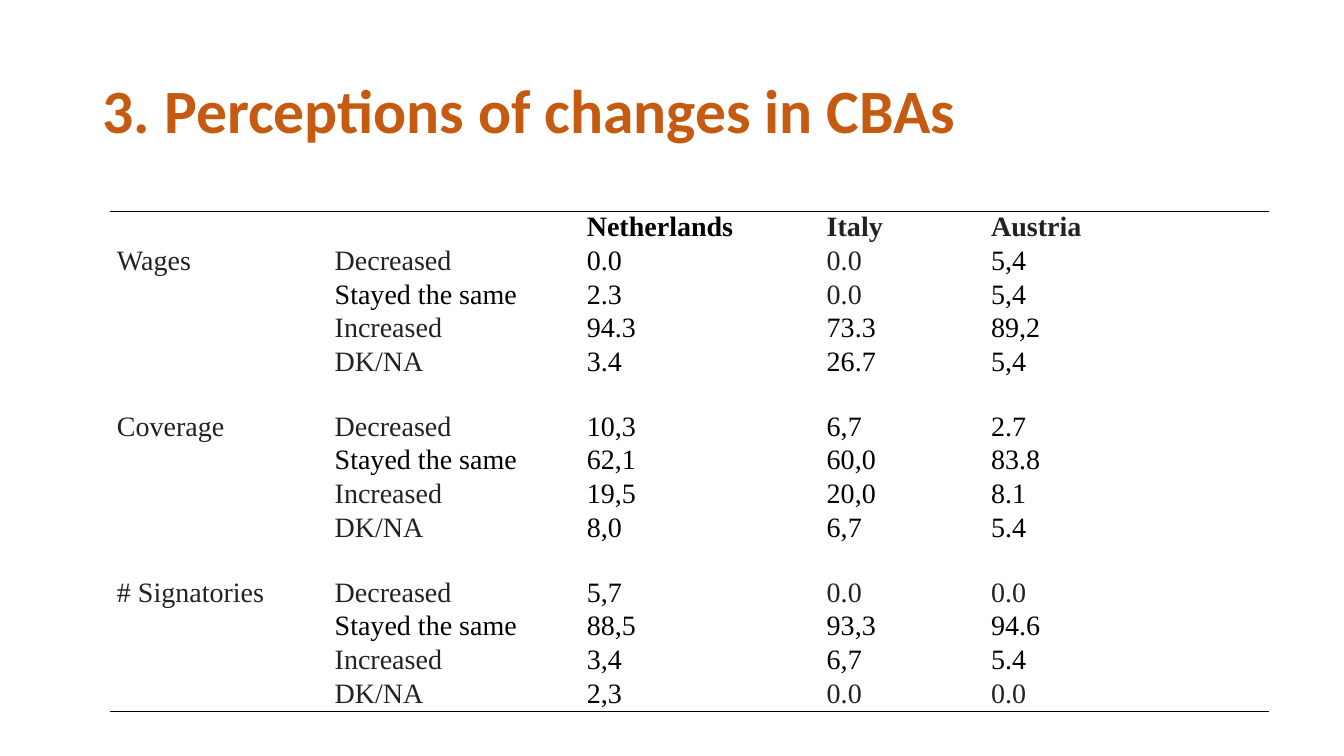
"""Build the slide on perceived changes in collective agreements."""
from lxml.etree import SubElement, Element
from pptx import Presentation
from pptx.dml.color import RGBColor
from pptx.enum.text import MSO_ANCHOR as Anchor, PP_ALIGN as Align
from pptx.oxml.ns import qn
from pptx.util import Inches, Pt

ORANGE = RGBColor(0xC5, 0x5A, 0x11)
BLACK = RGBColor(0, 0, 0)
GREY = RGBColor(0x22, 0x22, 0x22)

NO_GRID_STYLE = "{2D5ABB26-0587-4C30-8999-92F81FD0307C}"
COLUMN_WIDTHS = [2.16, 2.5, 2.38, 1.63, 2.83]
ROW_HEIGHT = 0.31
COUNTRIES = ["Netherlands", "Italy", "Austria"]
ANSWERS = ["Decreased", "Stayed the same", "Increased", "DK/NA"]
TOPICS = {
    "Wages": [["0.0", "0.0", "5,4"], ["2.3", "0.0", "5,4"],
              ["94.3", "73.3", "89,2"], ["3.4", "26.7", "5,4"]],
    "Coverage": [["10,3", "6,7", "2.7"], ["62,1", "60,0", "83.8"],
                 ["19,5", "20,0", "8.1"], ["8,0", "6,7", "5.4"]],
    "# Signatories": [["5,7", "0.0", "0.0"], ["88,5", "93,3", "94.6"],
                      ["3,4", "6,7", "5.4"], ["2,3", "0.0", "0.0"]],
}
GREY_TEXTS = {"Italy", "Austria", "0.0", *TOPICS, *ANSWERS} - {"Stayed the same"}


class SlideBuilder:
    def __init__(self, slide):
        self.slide = slide
        self.title_font = "Calibri"
        self.table_font = "Times New Roman"

    def add_span(self, para, text, font, size, color, bold):
        span = para.add_run()
        span.text = text
        span.font.name = font
        span.font.size = Pt(size)
        span.font.bold = bold
        span.font.color.rgb = color

    def add_title(self, text, left, top, width, height):
        box = self.slide.shapes.add_textbox(
            Inches(left), Inches(top), Inches(width), Inches(height))
        frame = box.text_frame
        frame.word_wrap = True
        frame.vertical_anchor = Anchor.MIDDLE
        para = frame.paragraphs[0]
        para.line_spacing = 0.9
        self.add_span(para, text, self.title_font, 44, ORANGE, True)

    def add_rule(self, cell, side):
        line = Element(qn(f"a:{side}"), w=str(Pt(1)))
        fill = SubElement(line, qn("a:solidFill"))
        SubElement(fill, qn("a:srgbClr"), val=str(BLACK))
        cell._tc.get_or_add_tcPr().insert(0, line)

    def fill_cell(self, cell, text, color, bold):
        cell.fill.background()
        cell.margin_left = cell.margin_right = Inches(0.07)
        cell.margin_top = cell.margin_bottom = 0
        if text:
            para = cell.text_frame.paragraphs[0]
            para.alignment = Align.JUSTIFY
            self.add_span(para, text, self.table_font, 20, color, bold)

    def add_table(self, rows, left, top):
        frame = self.slide.shapes.add_table(
            len(rows), len(COLUMN_WIDTHS), Inches(left), Inches(top),
            Inches(sum(COLUMN_WIDTHS)), Inches(ROW_HEIGHT * len(rows)))
        table = frame.table
        table.first_row = table.horz_banding = False
        table._tbl.tblPr.find(qn("a:tableStyleId")).text = NO_GRID_STYLE
        for column, width in zip(table.columns, COLUMN_WIDTHS):
            column.width = Inches(width)
        for r, texts in enumerate(rows):
            table.rows[r].height = Inches(ROW_HEIGHT)
            for c, text in enumerate(texts):
                grey = text in GREY_TEXTS and c != 2
                self.fill_cell(table.cell(r, c), text, GREY if grey else BLACK, r == 0)
        for c in range(len(COLUMN_WIDTHS)):
            self.add_rule(table.cell(0, c), "lnT")
            self.add_rule(table.cell(len(rows) - 1, c), "lnB")


def table_rows():
    rows = [["", "", *COUNTRIES]]
    for t, (topic, shares) in enumerate(TOPICS.items()):
        if t:
            rows.append([""] * len(COLUMN_WIDTHS))
        for a, (answer, values) in enumerate(zip(ANSWERS, shares)):
            rows.append(["" if a else topic, answer, *values])
    return rows


def main():
    deck = Presentation()
    deck.slide_width = Inches(13.33)
    deck.slide_height = Inches(7.5)
    page = SlideBuilder(deck.slides.add_slide(deck.slide_layouts[6]))
    page.add_title("3. Perceptions of changes in CBAs", 0.92, 0.4, 11.5, 1.45)
    page.add_table(table_rows(), 1.09, 2.1)
    deck.save("out.pptx")


if __name__ == "__main__":
    main()
